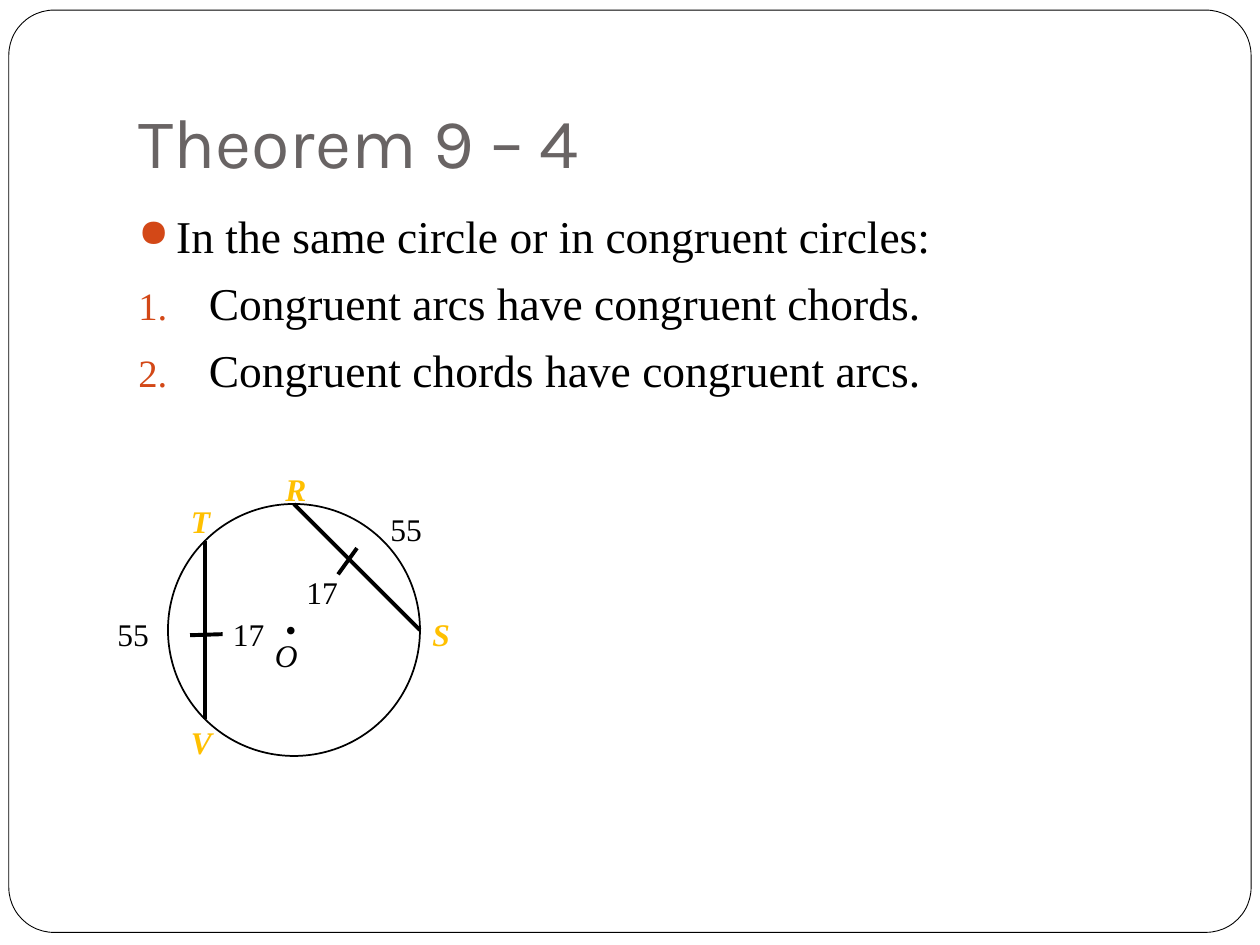
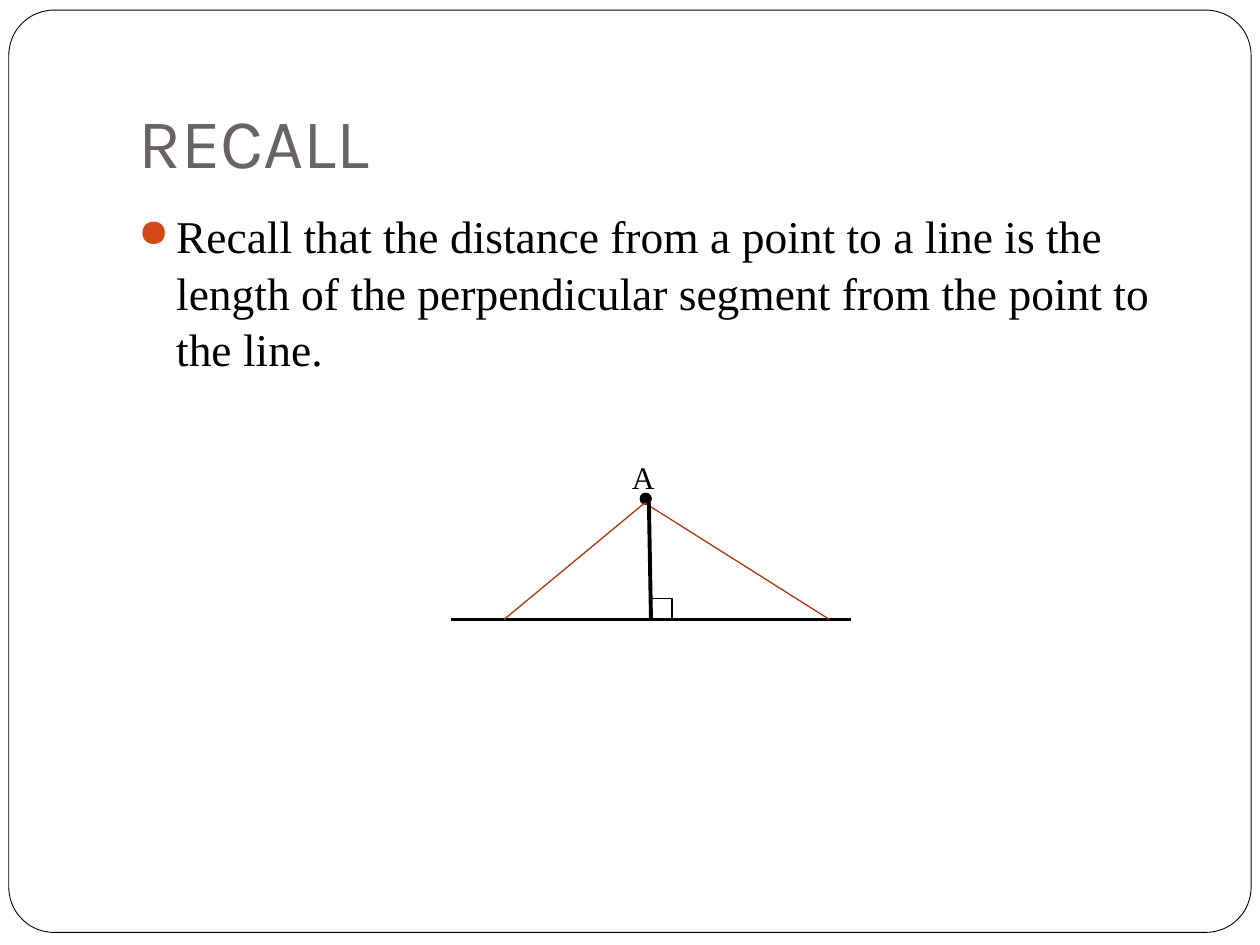
from dataclasses import dataclass

from pptx import Presentation
from pptx.dml.color import RGBColor
from pptx.enum.shapes import MSO_CONNECTOR, MSO_SHAPE
from pptx.enum.text import MSO_ANCHOR, MSO_AUTO_SIZE, PP_ALIGN
from pptx.oxml.ns import qn
from pptx.util import Inches, Pt

COLUMNS, ROWS = 120, 90
TITLE_ONLY = 5


@dataclass(frozen=True)
class Theme:
    title_font: str = "Karla"
    text_font: str = "Times New Roman"
    title_size: float = 40
    body_size: float = 26
    label_size: float = 18
    paper: str = "FFFFFF"
    ink: str = "000000"
    title: str = "696464"
    bullet: str = "D34817"
    point: str = "FFC000"
    oblique: str = "B1360B"
    hairline: float = 0.5
    thin: float = 0.75
    outline: float = 1
    thick: float = 2.25


def set_format(target, values):
    for name, value in values.items():
        setattr(target, name, value)


class Deck:
    """Holds the theme and the current slide; places are in grid columns and rows."""

    def __init__(self, theme):
        self.theme = theme
        self.presentation = Presentation()
        set_format(self.presentation, {"slide_width": Inches(10), "slide_height": Inches(7.5)})
        self.slide = None

    def x(self, columns):
        return round(self.presentation.slide_width * columns / COLUMNS)

    def y(self, rows):
        return round(self.presentation.slide_height * rows / ROWS)

    def box(self, left, top, width, height):
        return self.x(left), self.y(top), self.x(width), self.y(height)

    def style_font(self, font, size, color, name=None, **extra):
        set_format(font, {"name": name or self.theme.text_font, "size": Pt(size), **extra})
        font.color.rgb = RGBColor.from_string(color)

    def style_line(self, line, color, width):
        line.color.rgb = RGBColor.from_string(color)
        line.width = Pt(width)

    def new_slide(self, title):
        layout = self.presentation.slide_layouts[TITLE_ONLY]
        self.slide = self.presentation.slides.add_slide(layout)
        # Rounded frame, sent behind the title
        frame = self.shape(MSO_SHAPE.ROUNDED_RECTANGLE, 0.84, 0.96, 118.32, 87.84,
                           fill=self.theme.paper, width=self.theme.hairline)
        frame.adjustments[0] = 0.049
        frame.element.getparent().insert(2, frame.element)
        # Title
        heading = self.slide.shapes.title
        places = self.box(12, 3.6, 102, 15)
        set_format(heading, dict(zip(("left", "top", "width", "height"), places)))
        text_frame = heading.text_frame
        text_frame.text = title
        set_format(text_frame, {
            "vertical_anchor": MSO_ANCHOR.BOTTOM, "auto_size": MSO_AUTO_SIZE.NONE,
            "margin_left": Inches(0.1), "margin_right": Inches(0.1),
            "margin_top": Inches(0.05), "margin_bottom": Inches(0.1)})
        paragraph = text_frame.paragraphs[0]
        paragraph.alignment = PP_ALIGN.LEFT
        self.style_font(paragraph.runs[0].font, self.theme.title_size, self.theme.title,
                        self.theme.title_font)

    def text_box(self, left, top, width, height):
        text_frame = self.slide.shapes.add_textbox(*self.box(left, top, width, height)).text_frame
        text_frame.word_wrap = True
        return text_frame

    def body(self, lead, steps=()):
        text_frame = self.text_box(12, 19, 102, 60)
        for index, text in enumerate((lead, *steps)):
            paragraph = text_frame.paragraphs[0] if index == 0 else text_frame.add_paragraph()
            set_format(paragraph, {"space_before": Pt(5.8), "line_spacing": 1.04})
            run = paragraph.add_run()
            run.text = text
            self.style_font(run.font, self.theme.body_size, self.theme.ink)
            self.bullet(paragraph, numbered=index > 0)

    def bullet(self, paragraph, numbered):
        properties = paragraph._p.get_or_add_pPr()
        indent = Inches(0.56 if numbered else 0.3)
        properties.set("marL", str(indent))
        properties.set("indent", str(-indent))
        color = properties.makeelement(qn("a:buClr"), {})
        color.append(color.makeelement(qn("a:srgbClr"), {"val": self.theme.bullet}))
        properties.append(color)
        tag, values = (("a:buAutoNum", {"type": "arabicPeriod"}) if numbered
                       else ("a:buChar", {"char": "●"}))
        for name, attributes in (("a:buSzPct", {"val": "85000"}), (tag, values)):
            properties.append(properties.makeelement(qn(name), attributes))

    def label(self, text, left, top, width=5, height=4.8, color=None, **extra):
        run = self.text_box(left, top, width, height).paragraphs[0].add_run()
        run.text = text
        self.style_font(run.font, self.theme.label_size, color or self.theme.ink, **extra)

    def shape(self, kind, left, top, width_columns, height_rows, fill=None, width=None):
        shape = self.slide.shapes.add_shape(kind, *self.box(left, top, width_columns, height_rows))
        shape.shadow.inherit = False
        if fill:
            shape.fill.solid()
            shape.fill.fore_color.rgb = RGBColor.from_string(fill)
        else:
            shape.fill.background()
        self.style_line(shape.line, self.theme.ink, width or self.theme.outline)
        return shape

    def line(self, start, end, color=None, width=None):
        connector = self.slide.shapes.add_connector(
            MSO_CONNECTOR.STRAIGHT, self.x(start[0]), self.y(start[1]),
            self.x(end[0]), self.y(end[1]))
        self.style_line(connector.line, color or self.theme.ink, width or self.theme.thick)
        properties = connector.element.spPr
        properties.append(properties.makeelement(qn("a:effectLst"), {}))


def build_theorem(deck):
    deck.new_slide("Theorem 9 – 4")
    deck.body("In the same circle or in congruent circles:",
              ("Congruent arcs have congruent chords.", "Congruent chords have congruent arcs."))
    # Circle and its centre
    deck.shape(MSO_SHAPE.OVAL, 16, 48, 24, 24, fill=deck.theme.paper)
    deck.label("•", 26, 57.5, width=4)
    deck.label("O", 25, 60, italic=True)
    # Chords RS and TV, each with its congruence tick
    for start, end in (((28, 48), (40, 60)), ((19.5, 51.5), (19.5, 68.5)),
                       ((34, 52.2), (32.2, 54.7)), ((18.1, 60.5), (21.2, 60.4))):
        deck.line(start, end)
    # Chord endpoints
    for name, left, top in (("R", 26, 44.2), ("S", 40, 58), ("T", 17, 47.2), ("V", 17, 68.3)):
        deck.label(name, left, top, color=deck.theme.point, bold=True, italic=True)
    # Arc and chord measures
    for measure, left, top in (("55", 36, 48), ("17", 28, 54), ("17", 21, 58), ("55", 10, 58)):
        deck.label(measure, left, top, width=9)


def build_recall(deck):
    deck.new_slide("RECALL")
    deck.body("Recall that the distance from a point to a line is the length of the "
              "perpendicular segment from the point to the line.")
    # Base line and point A
    base = 59
    apex = (61.4, 47.9)
    deck.line((43, base), (81, base))
    deck.shape(MSO_SHAPE.OVAL, 61, 47, 1, 1, fill=deck.theme.ink)
    deck.label("A", 59, 43)
    # Oblique segments, then the perpendicular with its right angle
    for foot in (48, 79):
        deck.line(apex, (foot, base), deck.theme.oblique, deck.theme.thin)
    deck.line((62, base), (61.8, apex[1]))
    deck.shape(MSO_SHAPE.RECTANGLE, 62, base - 2, 2, 2)


def main():
    deck = Deck(Theme())
    build_theorem(deck)
    build_recall(deck)
    deck.presentation.save("out.pptx")


if __name__ == "__main__":
    main()
